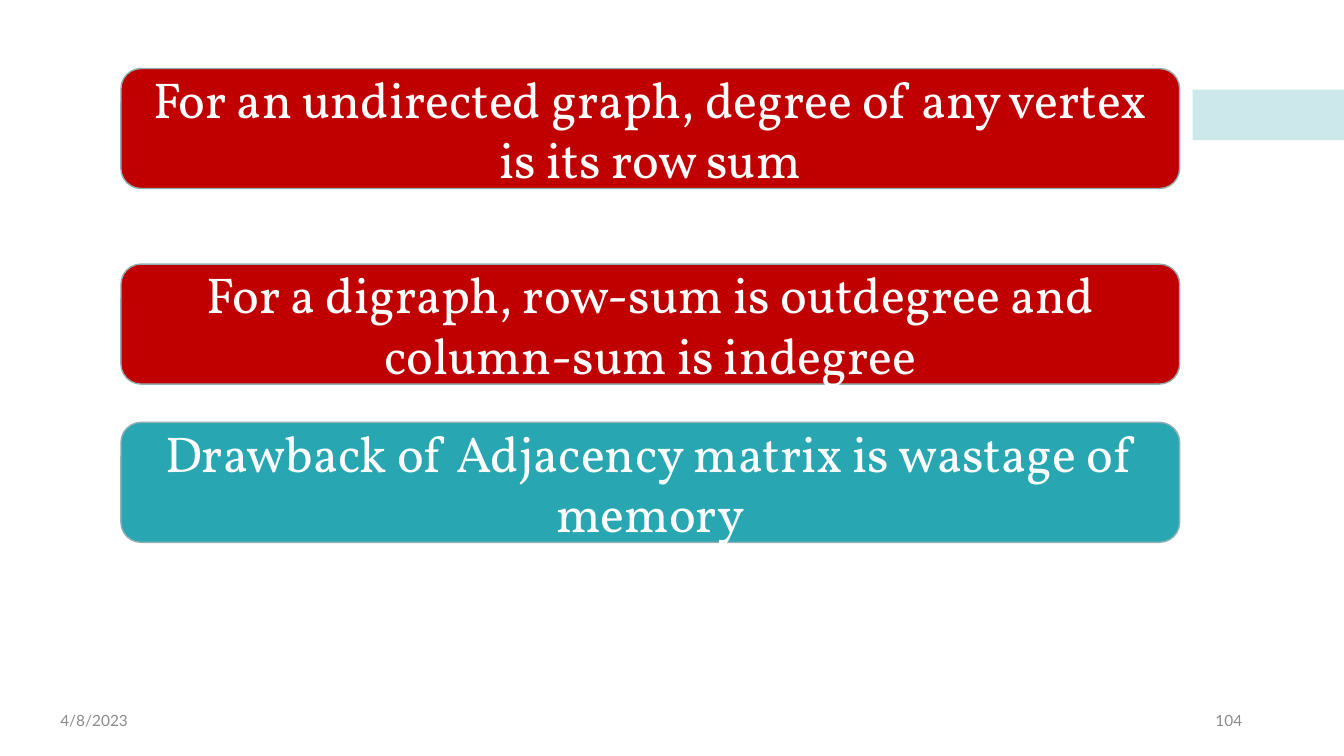
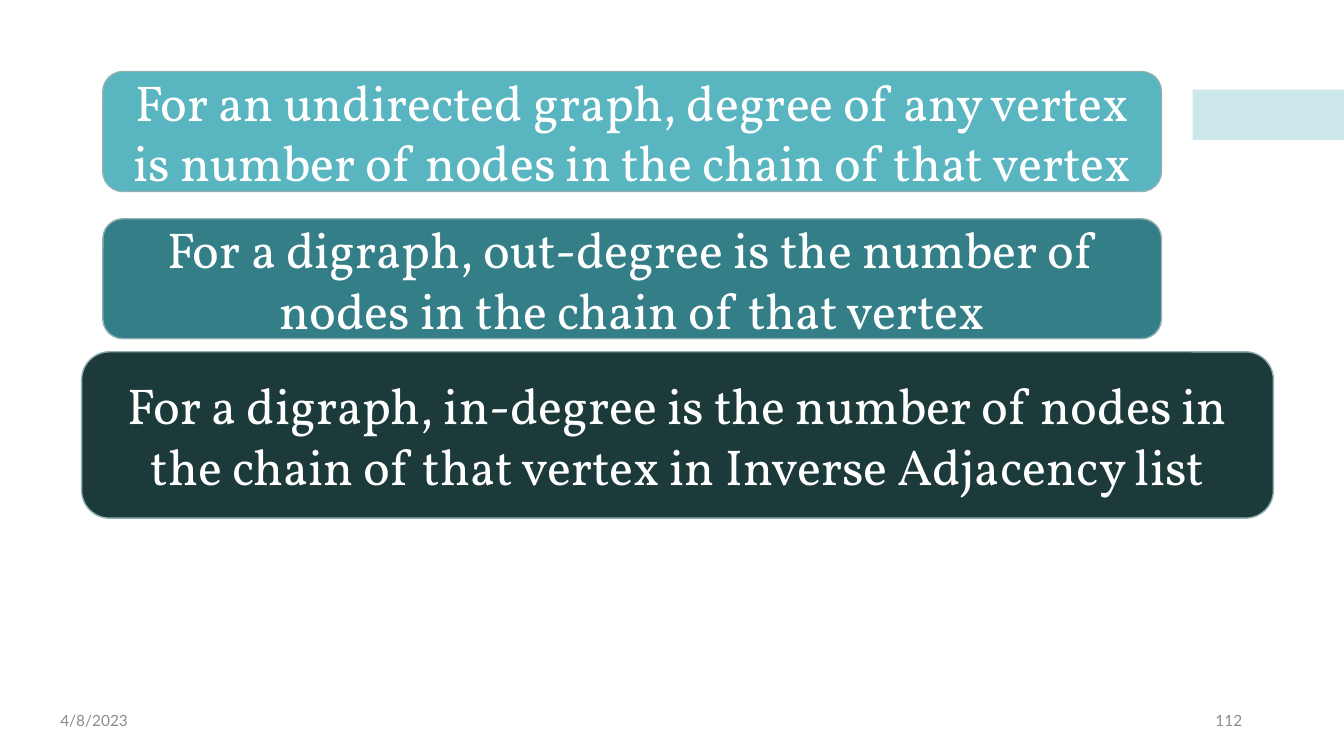
from dataclasses import dataclass

from lxml import etree
from pptx import Presentation
from pptx.dml.color import RGBColor
from pptx.enum.shapes import MSO_SHAPE
from pptx.enum.text import MSO_ANCHOR, PP_ALIGN
from pptx.oxml.ns import qn
from pptx.util import Inches, Pt

RECTANGLE = MSO_SHAPE.RECTANGLE
ROUNDED = MSO_SHAPE.ROUNDED_RECTANGLE
MIDDLE = MSO_ANCHOR.MIDDLE
LEFT, CENTER, RIGHT = PP_ALIGN.LEFT, PP_ALIGN.CENTER, PP_ALIGN.RIGHT
BLANK_LAYOUT = 6


@dataclass(frozen=True)
class Theme:
    """Colours, fonts and type sizes shared by the slides."""

    accent: str = "9CD3D9"
    outline: str = "91B0B3"
    red: str = "C00000"
    teal: str = "28A7B3"
    light_teal: str = "59B5BF"
    mid_teal: str = "347F87"
    dark_teal: str = "1C3A3A"
    statement_color: str = "FFFFFF"
    footer_color: str = "8C8C8C"
    statement_font: str = "Vollkorn"
    footer_font: str = "Lato"
    statement_size: int = 36
    footer_size: int = 11


THEME = Theme()
DATE = "4/8/2023"
STATEMENT_SIZE = (10.5, 1.19)
WIDE_STATEMENT_SIZE = (11.82, 1.65)

SLIDES = [
    ("104", [
        ("For an undirected graph, degree of any vertex is its row sum",
         (1.2, 0.68), STATEMENT_SIZE, THEME.red),
        ("For a digraph, row-sum is outdegree and column-sum is indegree",
         (1.2, 2.62), STATEMENT_SIZE, THEME.red),
        ("Drawback of Adjacency matrix is wastage of memory",
         (1.2, 4.19), STATEMENT_SIZE, THEME.teal),
    ]),
    ("112", [
        ("For an undirected graph, degree of any vertex is number of nodes "
         "in the chain of that vertex",
         (1.02, 0.71), STATEMENT_SIZE, THEME.light_teal),
        ("For a digraph, out-degree is the number of nodes in the chain of "
         "that vertex",
         (1.02, 2.17), STATEMENT_SIZE, THEME.mid_teal),
        ("For a digraph, in-degree is the number of nodes in the chain of "
         "that vertex in Inverse Adjacency list",
         (0.81, 3.49), WIDE_STATEMENT_SIZE, THEME.dark_teal),
    ]),
]


def write(frame, text, font, size, color, align):
    """Write one vertically centred paragraph into a text frame."""
    frame.word_wrap = True
    frame.vertical_anchor = MIDDLE
    paragraph = frame.paragraphs[0]
    paragraph.alignment = align
    run = paragraph.add_run()
    run.text = text
    run.font.name = font
    run.font.size = Pt(size)
    run.font.color.rgb = RGBColor.from_string(color)


def add_filled(slide, preset, position, size, color):
    """Add a flat preset shape with a solid fill."""
    shape = slide.shapes.add_shape(preset, *map(Inches, position + size))
    shape.shadow.inherit = False
    shape.fill.solid()
    shape.fill.fore_color.rgb = RGBColor.from_string(color)
    return shape


def add_accent_band(slide):
    """Add the half-transparent band at the right edge."""
    band = add_filled(slide, RECTANGLE, (11.83, 0.89), (1.5, 0.5), THEME.accent)
    band.line.fill.background()
    color = band.fill._xPr.find(qn("a:solidFill")).find(qn("a:srgbClr"))
    etree.SubElement(color, qn("a:alpha"), val="50000")


def add_footer(slide, text, left, align):
    """Add one footer entry on the common footer line."""
    footer = slide.shapes.add_textbox(*map(Inches, (left, 6.95, 3, 0.4)))
    write(footer.text_frame, text, THEME.footer_font, THEME.footer_size,
          THEME.footer_color, align)


def add_statement(slide, text, position, size, color):
    """Add a rounded box holding one statement."""
    box = add_filled(slide, ROUNDED, position, size, color)
    box.line.color.rgb = RGBColor.from_string(THEME.outline)
    box.line.width = Pt(1)
    write(box.text_frame, text, THEME.statement_font, THEME.statement_size,
          THEME.statement_color, CENTER)


def add_statement_slide(presentation, number, statements):
    """Add a slide with the shared furniture and its statements."""
    slide = presentation.slides.add_slide(
        presentation.slide_layouts[BLANK_LAYOUT])
    add_accent_band(slide)
    add_footer(slide, DATE, 0.5, LEFT)
    add_footer(slide, number, 9.42, RIGHT)
    for statement in statements:
        add_statement(slide, *statement)


def main():
    """Build and save the presentation."""
    presentation = Presentation()
    presentation.slide_width = Inches(13.33)
    presentation.slide_height = Inches(7.5)
    for number, statements in SLIDES:
        add_statement_slide(presentation, number, statements)
    presentation.save("out.pptx")


if __name__ == "__main__":
    main()
